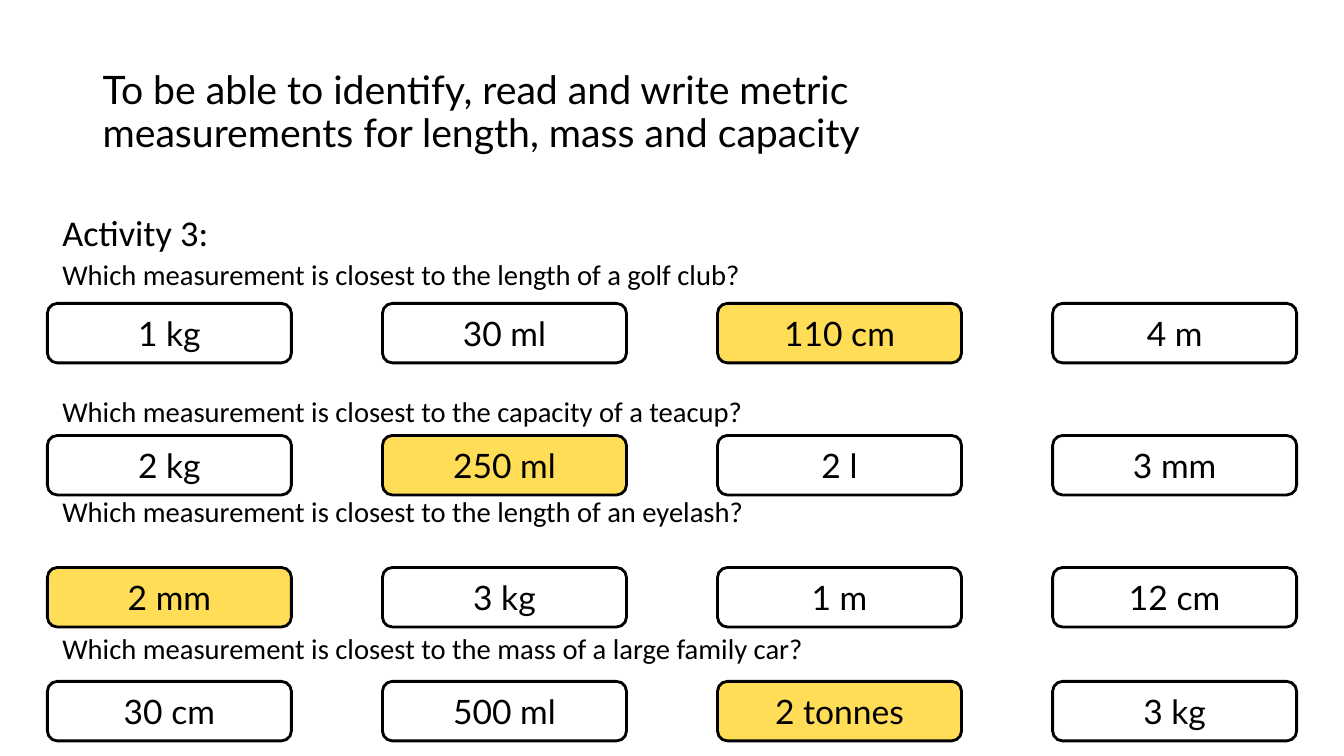
from pptx import Presentation
from pptx.dml.color import RGBColor
from pptx.enum import shapes, text
from pptx.util import Inches, Pt

BLACK = RGBColor(0x00, 0x00, 0x00)
WHITE = RGBColor(0xFF, 0xFF, 0xFF)
GOLD = RGBColor(0xFF, 0xDD, 0x57)

TITLE = ("To be able to identify, read and write metric "
         "measurements for length, mass and capacity")
STEM = "Which measurement is closest to the "

# Question ending, space before it in points
ASKS = [
    ("length of a golf club?", 10),
    ("capacity of a teacup?", 81),
    ("length of an eyelash?", 54),
    ("mass of a large family car?", 81),
]

# Top of the row, its choices, index of the right one
ROWS = [
    (3.01, ["1 kg", "30 ml", "110 cm", "4 m"], 2),
    (4.32, ["2 kg", "250 ml", "2 l", "3 mm"], 1),
    (5.63, ["2 mm", "3 kg", "1 m", "12 cm"], 0),
    (6.76, ["30 cm", "500 ml", "2 tonnes", "3 kg"], 2),
]


def add_run(para, words, size, font):
    run = para.add_run()
    run.text = words
    run.font.size = Pt(size)
    run.font.name = font
    run.font.color.rgb = BLACK


def add_frame(slide, left, top, width, height):
    box = slide.shapes.add_textbox(Inches(left), Inches(top),
                                   Inches(width), Inches(height))
    frame = box.text_frame
    frame.word_wrap = True
    return frame


def add_title(slide, left, top, width, height):
    frame = add_frame(slide, left, top, width, height)
    frame.vertical_anchor = text.MSO_ANCHOR.MIDDLE
    para = frame.paragraphs[0]
    para.line_spacing = 0.9
    add_run(para, TITLE, 28, "Lato")


def add_asks(slide, left, top, width, height):
    frame = add_frame(slide, left, top, width, height)
    head = frame.paragraphs[0]
    head.line_spacing = 0.7
    add_run(head, "Activity 3:", 25.9, "Calibri")
    for ending, gap in ASKS:
        para = frame.add_paragraph()
        para.line_spacing = 0.7
        para.space_before = Pt(gap)
        add_run(para, STEM + ending, 20.4, "Calibri")


def add_row(slide, left, top, width, height, labels, right):
    wide = 2.42
    step = (width - wide) / (len(labels) - 1)
    for col, label in enumerate(labels):
        card = slide.shapes.add_shape(
            shapes.MSO_SHAPE.ROUNDED_RECTANGLE, Inches(left + col * step),
            Inches(top), Inches(wide), Inches(height))
        card.shadow.inherit = False
        card.fill.solid()
        card.fill.fore_color.rgb = GOLD if col == right else WHITE
        card.line.color.rgb = BLACK
        card.line.width = Pt(2)
        frame = card.text_frame
        frame.vertical_anchor = text.MSO_ANCHOR.MIDDLE
        para = frame.paragraphs[0]
        para.alignment = text.PP_ALIGN.CENTER
        add_run(para, label, 24, "Lato")


def main():
    deck = Presentation()
    deck.slide_width = Inches(13.33)
    deck.slide_height = Inches(7.5)
    slide = deck.slides.add_slide(deck.slide_layouts[6])

    # Heading and questions
    add_title(slide, 0.92, 0.4, 9.6, 1.45)
    add_asks(slide, 0.52, 2.15, 11.5, 4.76)

    # Answer cards
    for top, labels, right in ROWS:
        add_row(slide, 0.47, top, 12.39, 0.59, labels, right)

    deck.save("out.pptx")


if __name__ == "__main__":
    main()
